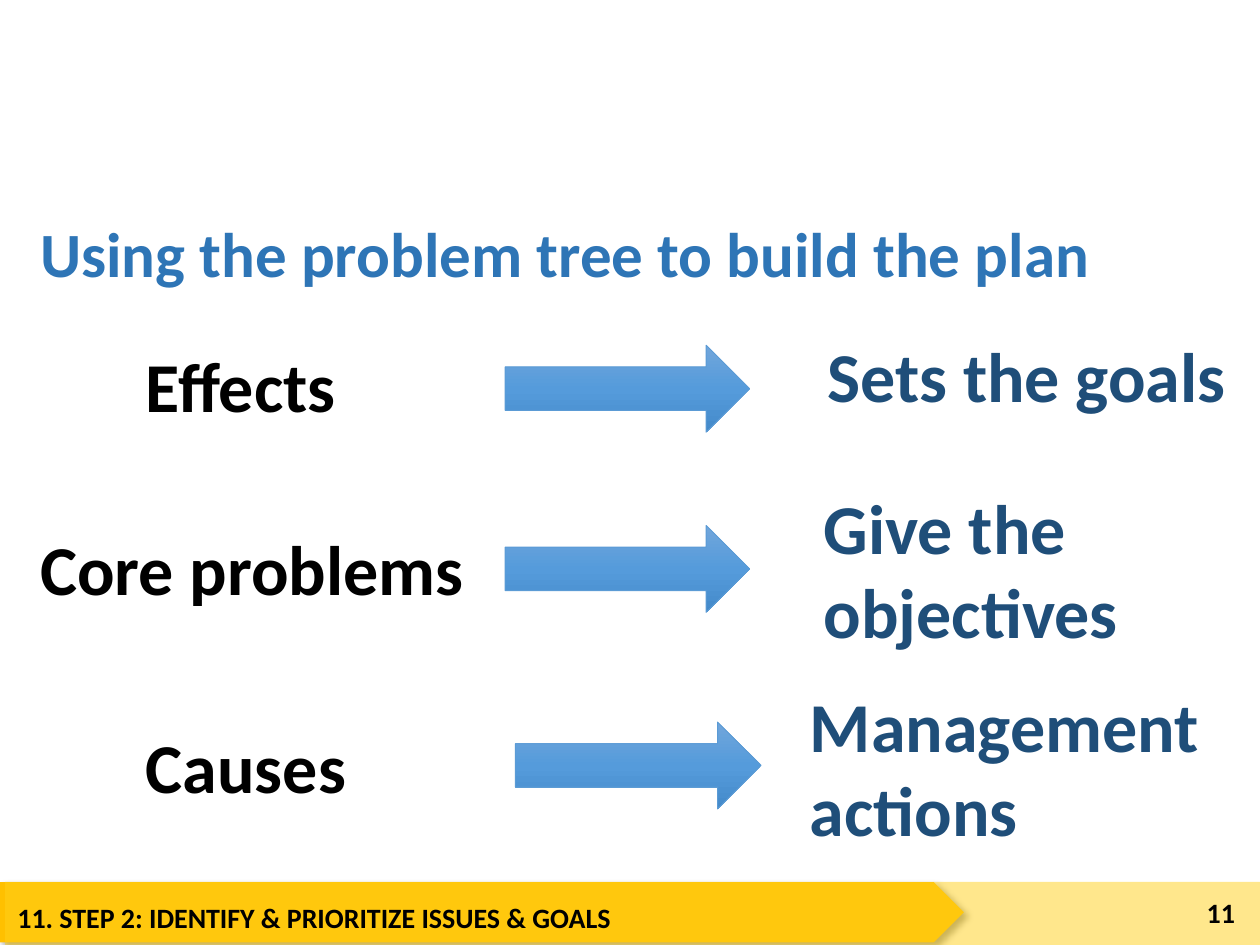
from dataclasses import dataclass

from lxml.etree import SubElement
from pptx import Presentation
from pptx.dml.color import RGBColor
from pptx.enum.shapes import MSO_SHAPE
from pptx.enum.text import MSO_ANCHOR, MSO_AUTO_SIZE, PP_ALIGN
from pptx.oxml.ns import qn
from pptx.util import Inches, Pt

FONT = "Calibri"
BLACK, TITLE_BLUE, NAVY = "000000", "2E75B6", "1F4E79"
ARROW_STOPS = ((0, "71A6DB"), (50, "559BDB"), (100, "448ACA"))

Box = tuple[float, float, float, float]


@dataclass
class Link:
    cause: str
    cause_box: Box
    arrow_box: Box
    result: str
    result_box: Box
    wrap: bool = False


LINKS = [
    Link("Effects", (1.06, 2.67, 1.74, 0.77), (4.01, 2.74, 1.94, 0.69),
         "Sets the goals", (6.47, 2.59, 3.4, 0.77)),
    Link("Core problems", (0.22, 4.12, 3.6, 0.77), (4.01, 4.17, 1.94, 0.69),
         "Give the objectives", (6.44, 3.8, 3.06, 1.45), wrap=True),
    Link("Causes", (1.06, 5.69, 1.81, 0.77), (4.09, 5.73, 1.95, 0.69),
         "Management\nactions", (6.33, 5.37, 3.32, 1.45)),
]


def rgb(value: str) -> RGBColor:
    return RGBColor.from_string(value)


def add_text(s, text: str, box: Box, *, size: int = 40, color: str = BLACK,
             align=PP_ALIGN.LEFT, anchor=MSO_ANCHOR.TOP, wrap: bool = True,
             grow: bool = False, spacing: float = 1.0):
    sp = s.shapes.add_textbox(*map(Inches, box))
    tf = sp.text_frame
    tf.word_wrap = wrap
    tf.auto_size = MSO_AUTO_SIZE.SHAPE_TO_FIT_TEXT if grow else MSO_AUTO_SIZE.NONE
    tf.vertical_anchor = anchor
    tf.text = text
    for p in tf.paragraphs:
        p.alignment = align
        p.line_spacing = spacing
        for r in p.runs:
            r.font.name = FONT
            r.font.size = Pt(size)
            r.font.bold = True
            r.font.color.rgb = rgb(color)
    return sp


def add_band(s, kind, box: Box, color: str):
    sp = s.shapes.add_shape(kind, *map(Inches, box))
    sp.fill.solid()
    sp.fill.fore_color.rgb = rgb(color)
    sp.line.fill.background()
    sp.shadow.inherit = False
    return sp


def add_alpha(color, percent: int) -> None:
    SubElement(color, qn("a:alpha"), val=str(percent * 1000))


def add_shadow(sp) -> None:
    effects = sp._element.spPr.find(qn("a:effectLst"))
    shadow = SubElement(effects, qn("a:outerShdw"), blurRad=str(Pt(4)),
                        dist=str(Pt(3)), dir=str(45 * 60000), algn="tl",
                        rotWithShape="0")
    add_alpha(SubElement(shadow, qn("a:srgbClr"), val=BLACK), 40)


def add_arrow(s, box: Box):
    sp = s.shapes.add_shape(MSO_SHAPE.RIGHT_ARROW, *map(Inches, box))
    sp.shadow.inherit = False
    sp.fill.gradient()
    sp.fill.gradient_angle = 270
    stops = sp._element.spPr.find(".//" + qn("a:gsLst"))
    for stop in list(stops):
        stops.remove(stop)
    for position, color in ARROW_STOPS:
        stop = SubElement(stops, qn("a:gs"), pos=str(position * 1000))
        SubElement(stop, qn("a:srgbClr"), val=color)
    sp.line.color.rgb = rgb("5B9BD5")
    sp.line.width = Pt(0.5)
    return sp


def add_footer(s) -> None:
    add_shadow(add_band(s, MSO_SHAPE.PENTAGON, (0, 7, 7.65, 0.48), "FFC000"))
    veil = add_band(s, MSO_SHAPE.RECTANGLE, (0.04, 7, 9.96, 0.53), "FFD01B")
    add_alpha(veil._element.spPr.find(".//" + qn("a:srgbClr")), 50)
    add_text(s, "11. STEP 2: IDENTIFY & PRIORITIZE ISSUES & GOALS",
             (0.04, 7.1, 7.35, 0.41), size=16)
    add_text(s, "11", (9.17, 7.04, 0.73, 0.4), size=16,
             align=PP_ALIGN.RIGHT, anchor=MSO_ANCHOR.MIDDLE)


def main() -> None:
    prs = Presentation()
    prs.slide_width, prs.slide_height = Inches(10), Inches(7.5)
    s = prs.slides.add_slide(prs.slide_layouts[6])
    add_footer(s)
    add_text(s, "Using the problem tree to build the plan", (0.22, 1.63, 9.09, 0.82),
             size=36, color=TITLE_BLUE, anchor=MSO_ANCHOR.MIDDLE, spacing=0.9)
    for link in LINKS:
        add_text(s, link.cause, link.cause_box, wrap=False, grow=True)
        add_arrow(s, link.arrow_box)
        add_text(s, link.result, link.result_box, color=NAVY, wrap=link.wrap, grow=True)
    prs.save("out.pptx")


if __name__ == "__main__":
    main()
